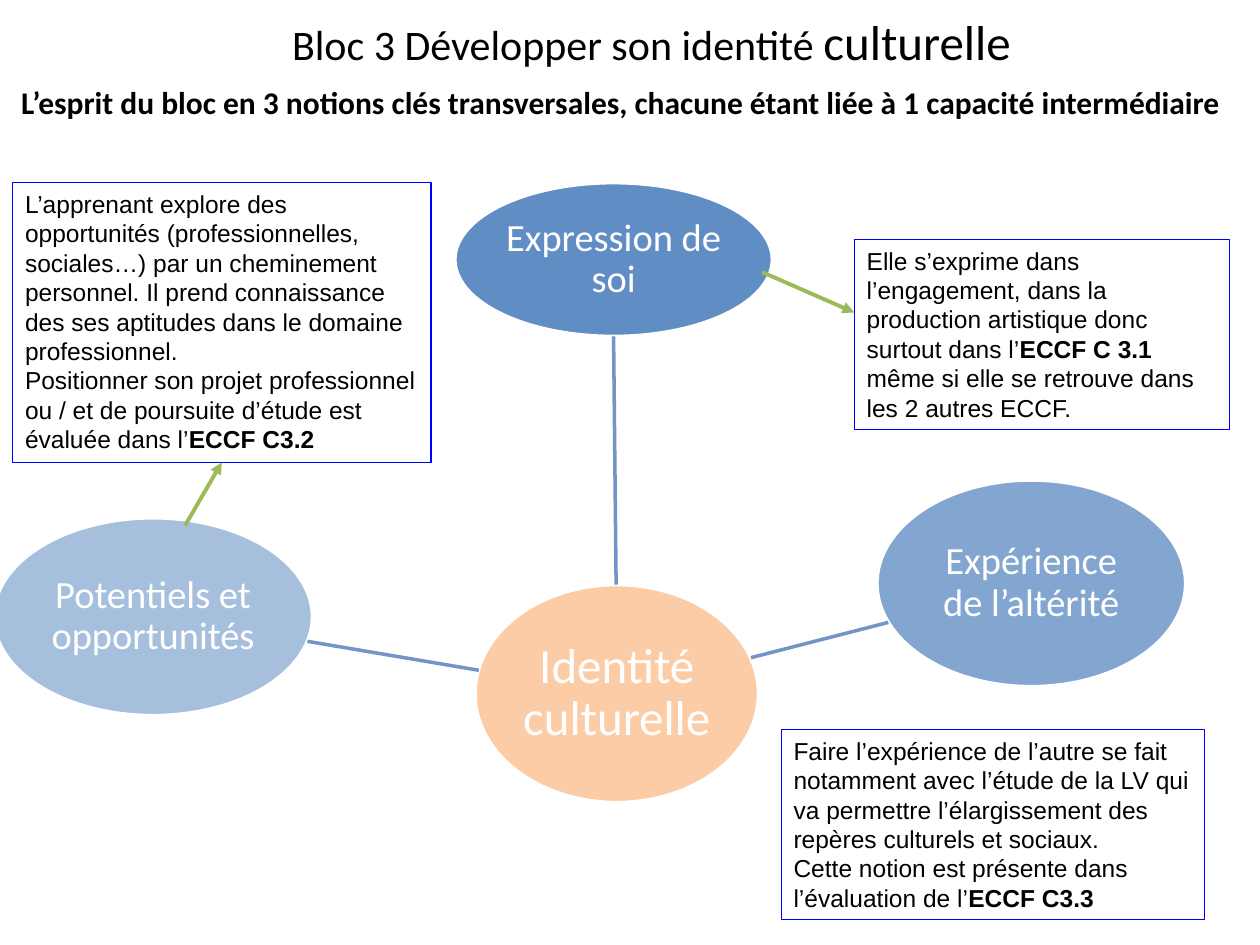
from lxml import etree
from pptx import Presentation
from pptx import util as u
from pptx.dml.color import RGBColor
from pptx.enum import shapes, text
from pptx.oxml.ns import qn

PX = 9144
BLUE = "4F81BD"


def px(*values):
    """Turn px lengths into EMU."""
    return [u.Emu(v * PX) for v in values]


def rgb(hex_code):
    """Turn a hex string into a colour."""
    return RGBColor.from_string(hex_code)


def style_line(line, color, width):
    """Set a line's colour and its width in points."""
    line.color.rgb = rgb(color)
    line.width = u.Pt(width)


def set_font(font, name, size, color="000000", bold=None):
    """Set the name, size, colour and weight of a font."""
    font.name, font.size, font.bold = name, u.Pt(size), bold
    font.color.rgb = rgb(color)


def add_heading(s, box, runs, align, bold=None):
    """Add a heading line from (text, size) runs."""
    tf = s.shapes.add_textbox(*px(*box)).text_frame
    tf.word_wrap = True
    p = tf.paragraphs[0]
    p.alignment = align
    for words, size in runs:
        r = p.add_run()
        r.text = words
        set_font(r.font, "Calibri", size, bold=bold)


def add_notion(s, box, words, size, color, opacity):
    """Add a translucent ellipse holding the name of a notion."""
    sp = s.shapes.add_shape(shapes.MSO_SHAPE.OVAL, *px(*box))
    sp.shadow.inherit = False
    sp.fill.solid()
    sp.fill.fore_color.rgb = rgb(color)
    clr = sp.fill._xPr.find(".//" + qn("a:srgbClr"))
    etree.SubElement(clr, qn("a:alpha"), val=str(opacity * 1000))
    style_line(sp.line, "FFFFFF", 2)
    tf = sp.text_frame
    tf.word_wrap = True
    tf.vertical_anchor = text.MSO_ANCHOR.MIDDLE
    tf.margin_left, tf.margin_top, tf.margin_right, tf.margin_bottom = px(2, 2, 2, 2)
    p = tf.paragraphs[0]
    p.text = words
    p.alignment = text.PP_ALIGN.CENTER
    p.line_spacing = 0.9
    set_font(p.font, "Calibri", size, "FFFFFF")


def add_callout(s, box, paragraphs):
    """Add a framed comment; each paragraph is a list of (text, bold) runs."""
    sp = s.shapes.add_shape(shapes.MSO_SHAPE.RECTANGLE, *px(*box))
    sp.shadow.inherit = False
    sp.fill.background()
    style_line(sp.line, "0000FF", 0.75)
    tf = sp.text_frame
    tf.word_wrap = True
    tf.vertical_anchor = text.MSO_ANCHOR.TOP
    for i, runs in enumerate(paragraphs):
        p = tf.add_paragraph() if i else tf.paragraphs[0]
        p.alignment = text.PP_ALIGN.LEFT
        for words, bold in runs:
            r = p.add_run()
            r.text = words
            set_font(r.font, "Arial", 14, bold=bold)
    return sp


def add_link(s, ends, color, width, arrow=False):
    """Add a straight link, with an arrowhead at its end on request."""
    c = s.shapes.add_connector(shapes.MSO_CONNECTOR.STRAIGHT, *px(*ends))
    style_line(c.line, color, width)
    if arrow:
        etree.SubElement(c.line._get_or_add_ln(), qn("a:tailEnd"), type="triangle")
    etree.SubElement(c._element.spPr, qn("a:effectLst"))
    return c


def add_diagram(s, left, top):
    """Add the central identity, its three notions and their spokes."""
    notions = [
        ((366, 319, 225, 173), "Identité culturelle", 28, "FAC090", 80),
        ((366, 0, 252, 122), "Expression de soi", 22, BLUE, 90),
        ((701, 236, 245, 164), "Expérience de l’altérité", 22, BLUE, 70),
        ((0, 266, 253, 157), "Potentiels et opportunités", 22, BLUE, 50),
    ]
    notions[0] = ((382, *notions[0][0][1:]), *notions[0][1:])
    spokes = [(494, 319, 492, 122), (601, 377, 710, 349), (385, 387, 249, 364)]
    for (x, y, w, h), *look in notions:
        add_notion(s, (left + x, top + y, w, h), *look)
    for x1, y1, x2, y2 in spokes:
        add_link(s, (left + x1, top + y1, left + x2, top + y2), "7394C5", 2)


def add_comments(s):
    """Add the three comments and the arrows leading to them."""
    add_callout(s, (678, 190, 298, 151), [[
        ("Elle s’exprime dans l’engagement, dans la production artistique donc "
         "surtout dans l’", False),
        ("ECCF C 3.1 ", True),
        ("même si elle se retrouve dans les 2 autres ECCF.", False)]])
    potential = add_callout(s, (10, 145, 332, 222), [
        [("L’apprenant explore des opportunités (professionnelles, sociales…) par un "
          "cheminement personnel. Il prend connaissance des ses aptitudes dans le "
          "domaine professionnel.", False)],
        [("Positionner son projet professionnel ou / et de poursuite d’étude est "
          "évaluée dans l’", False), ("ECCF C3.2", True)]])
    add_callout(s, (620, 579, 336, 151), [
        [("Faire l’expérience de l’autre se fait notamment avec l’étude de la LV qui "
          "va permettre l’élargissement des repères culturels et sociaux.", False)],
        [("Cette notion est présente dans l’évaluation de l’", False),
         ("ECCF C3.3", True)]])
    add_link(s, (605, 216, 678, 248), "9BBB59", 2.25, arrow=True)
    arrow = add_link(s, (147, 417, 176, 367), "9BBB59", 2.25, arrow=True)
    arrow.end_connect(potential, 2)


def main():
    """Build the slide and save it."""
    prs = Presentation()
    prs.slide_width, prs.slide_height = px(1000, 750)
    s = prs.slides.add_slide(prs.slide_layouts[6])
    add_heading(s, (167, 4, 700, 71),
                [("Bloc 3 Développer son identité ", 24), ("culturelle", 28)],
                text.PP_ALIGN.CENTER)
    add_heading(s, (7, 61, 982, 40),
                [("L’esprit du bloc en 3 notions clés transversales, chacune étant "
                  "liée à 1 capacité intermédiaire", 18)],
                text.PP_ALIGN.LEFT, bold=True)
    add_diagram(s, -5, 145)
    add_comments(s)
    prs.save("out.pptx")


if __name__ == "__main__":
    main()
